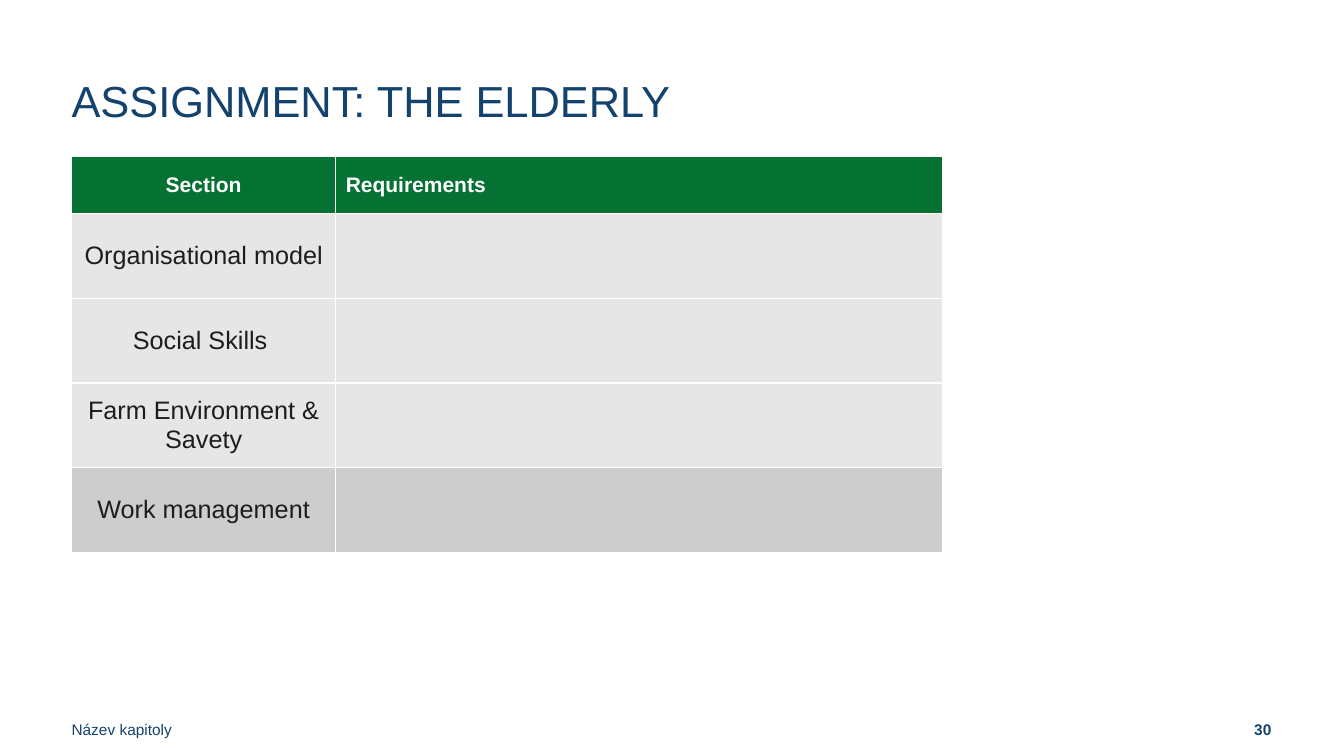
from dataclasses import dataclass

from lxml.etree import SubElement
from pptx import Presentation
from pptx.dml.color import RGBColor
from pptx.enum.text import MSO_ANCHOR, PP_ALIGN
from pptx.oxml.ns import qn
from pptx.slide import Slide
from pptx.table import _Cell
from pptx.text.text import TextFrame
from pptx.util import Inches, Pt


@dataclass(frozen=True)
class Theme:
    font: str = "Arial"
    navy: str = "13426F"
    green: str = "057233"
    ink: str = "1D1D1B"
    white: str = "FFFFFF"
    light: str = "E6E6E6"
    grey: str = "CDCDCD"
    title_size: float = 31
    header_size: float = 15
    body_size: float = 18
    footer_size: float = 11
    title_leading: float = 34
    footer_leading: float = 13.3


THEME = Theme()


@dataclass(frozen=True)
class Label:
    text: str
    box: tuple[float, float, float, float]
    insets: tuple[float, float, float, float]
    size: float
    leading: float
    bold: bool = False
    align: PP_ALIGN = PP_ALIGN.LEFT
    anchor: MSO_ANCHOR = MSO_ANCHOR.BOTTOM


@dataclass(frozen=True)
class SectionRow:
    section: str
    fill: str = THEME.light
    requirements: str = ""
    height: float = 0.84
    size: float = THEME.body_size
    color: str = THEME.ink
    bold: bool = False
    top_border: float = 1
    bottom_border: float = 1


LABELS = [
    Label("ASSIGNMENT: THE ELDERLY", (0.71, 0.73, 11.99, 1.12), (0, 0.05, 0.1, 0.05),
          THEME.title_size, THEME.title_leading, anchor=MSO_ANCHOR.TOP),
    Label("Název kapitoly", (0, 6.89, 4.5, 0.6), (0.71, 0.05, 0, 0.16),
          THEME.footer_size, THEME.footer_leading),
    Label("30", (10.32, 6.89, 3, 0.6), (0, 0.05, 0.71, 0.16),
          THEME.footer_size, THEME.footer_leading, bold=True, align=PP_ALIGN.RIGHT),
]

SECTIONS = [
    SectionRow("Section", THEME.green, "Requirements", 0.57, THEME.header_size, THEME.white, True),
    SectionRow("Organisational model"),
    SectionRow("Social Skills "),
    SectionRow("Farm Environment & Savety", bottom_border=0.75),
    SectionRow("Work management", THEME.grey, top_border=0.75, bottom_border=0.75),
]
COLUMN_WIDTHS = (2.62, 6.02)
TABLE_LEFT, TABLE_TOP = 0.71, 1.55


def write(frame: TextFrame, text: str, *, size: float, color: str, bold: bool = False,
          align: PP_ALIGN = PP_ALIGN.LEFT, leading: float | None = None) -> None:
    paragraph = frame.paragraphs[0]
    paragraph.alignment = align
    if leading:
        paragraph.line_spacing = Pt(leading)
    run = paragraph.add_run()
    run.text = text
    run.font.name = THEME.font
    run.font.size = Pt(size)
    run.font.bold = bold
    run.font.color.rgb = RGBColor.from_string(color)


def draw_label(slide: Slide, label: Label) -> None:
    frame = slide.shapes.add_textbox(*map(Inches, label.box)).text_frame
    frame.word_wrap = True
    frame.vertical_anchor = label.anchor
    (frame.margin_left, frame.margin_top,
     frame.margin_right, frame.margin_bottom) = map(Inches, label.insets)
    write(frame, label.text, size=label.size, color=THEME.navy, bold=label.bold,
          align=label.align, leading=label.leading)


def style_cell(cell: _Cell, row: SectionRow) -> None:
    properties = cell._tc.get_or_add_tcPr()
    borders = {"L": 1, "R": 1, "T": row.top_border, "B": row.bottom_border}
    for side, width in borders.items():
        border = SubElement(properties, qn(f"a:ln{side}"), w=str(Pt(width)))
        paint = SubElement(border, qn("a:solidFill"))
        SubElement(paint, qn("a:srgbClr"), val=THEME.white)
    cell.fill.solid()
    cell.fill.fore_color.rgb = RGBColor.from_string(row.fill)
    cell.vertical_anchor = MSO_ANCHOR.MIDDLE


def draw_sections(slide: Slide) -> None:
    table = slide.shapes.add_table(
        len(SECTIONS), len(COLUMN_WIDTHS), Inches(TABLE_LEFT), Inches(TABLE_TOP),
        Inches(sum(COLUMN_WIDTHS)), Inches(sum(row.height for row in SECTIONS))).table
    for column, width in zip(table.columns, COLUMN_WIDTHS):
        column.width = Inches(width)
    for index, row in enumerate(SECTIONS):
        table.rows[index].height = Inches(row.height)
        entries = ((row.section, PP_ALIGN.CENTER), (row.requirements, PP_ALIGN.LEFT))
        for cell, (text, align) in zip(table.rows[index].cells, entries):
            style_cell(cell, row)
            if text:
                write(cell.text_frame, text, size=row.size, color=row.color,
                      bold=row.bold, align=align)


def main() -> None:
    presentation = Presentation()
    presentation.slide_width = Inches(13.33)
    presentation.slide_height = Inches(7.5)
    slide = presentation.slides.add_slide(presentation.slide_layouts[6])
    for label in LABELS:
        draw_label(slide, label)
    draw_sections(slide)
    presentation.save("out.pptx")


if __name__ == "__main__":
    main()
